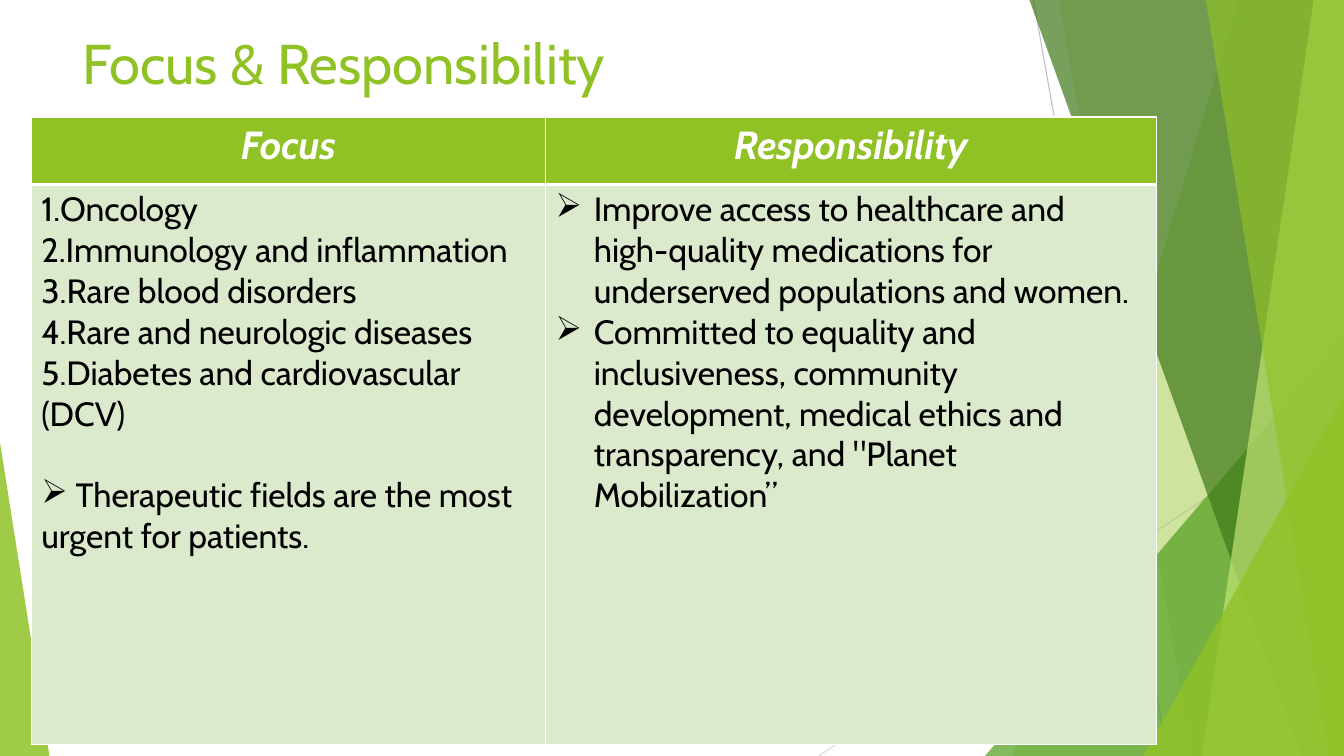
from dataclasses import dataclass

from lxml.etree import SubElement
from pptx import Presentation
from pptx.dml.color import RGBColor
from pptx.enum.shapes import MSO_CONNECTOR, MSO_SHAPE
from pptx.enum.text import MSO_ANCHOR, PP_ALIGN
from pptx.oxml.ns import qn
from pptx.util import Inches, Pt


@dataclass(frozen=True)
class Theme:
    font: str = "Cabin"
    green: str = "90C226"
    mid_green: str = "54A021"
    dark_green: str = "3F7819"
    light_green: str = "C0E474"
    body_fill: str = "DBE9CD"
    white: str = "FFFFFF"
    black: str = "000000"
    title_size: int = 40
    header_size: int = 28
    body_size: int = 24


theme = Theme()


def add_run(paragraph, text, size, color, emphasis=False):
    run = paragraph.add_run()
    run.text = text
    run.font.name = theme.font
    run.font.size = Pt(size)
    run.font.bold = run.font.italic = emphasis
    run.font.color.rgb = RGBColor.from_string(color)


def style_facet(shape, color, opacity):
    shape.shadow.inherit = False
    shape.line.fill.background()
    shape.fill.solid()
    shape.fill.fore_color.rgb = RGBColor.from_string(color)
    color_element = shape._element.spPr.find(qn("a:solidFill"))[0]
    SubElement(color_element, qn("a:alpha"), val=str(opacity * 1000))


presentation = Presentation()
presentation.slide_width = Inches(13.33)
presentation.slide_height = Inches(7.5)
slide = presentation.slides.add_slide(presentation.slide_layouts[6])
shapes = slide.shapes

# Thin background lines
for x1, y1, x2, y2, color in [
    (10.25, 0, 11.58, 7.5, "BFBFBF"),
    (13.33, 4.03, 8.12, 7.5, "D9D9D9"),
]:
    line = shapes.add_connector(
        MSO_CONNECTOR.STRAIGHT, Inches(x1), Inches(y1), Inches(x2), Inches(y2))
    line.line.color.rgb = RGBColor.from_string(color)
    line.line.width = Pt(0.75)
    SubElement(line._element.spPr, qn("a:effectLst"))

# Facets: bands (top x, bottom x) run to the right edge;
# triangles (left, top, width, apex) stand on the bottom edge
facets = [
    ("band", (12.28, 10.04), theme.green, 30),
    ("band", (10.5, 11.83), theme.green, 20),
    ("triangle", (9.77, 3.33, 3.56, 1), theme.mid_green, 72),
    ("band", (10.21, 12.91), theme.dark_green, 70),
    ("band", (13.03, 11.92), theme.light_green, 70),
    ("band", (11.96, 13.18), theme.green, 65),
    ("triangle", (11.34, 3.93, 1.99, 1), theme.green, 80),
    ("triangle", (0, 4.39, 0.49, 0), theme.green, 85),
]
for kind, geometry, color, opacity in facets:
    if kind == "band":
        top_x, bottom_x = geometry
        builder = shapes.build_freeform(Inches(top_x), 0)
        builder.add_line_segments([
            (Inches(13.33), 0),
            (Inches(13.33), Inches(7.5)),
            (Inches(bottom_x), Inches(7.5)),
        ])
        facet = builder.convert_to_shape()
    else:
        left, top, width, apex = geometry
        facet = shapes.add_shape(
            MSO_SHAPE.ISOSCELES_TRIANGLE,
            Inches(left), Inches(top), Inches(width), Inches(7.5 - top))
        facet.adjustments[0] = apex
    style_facet(facet, color, opacity)

# Title
title = shapes.add_textbox(Inches(0.72), Inches(0.23), Inches(9.4), Inches(1.44))
title.text_frame.word_wrap = True
title.text_frame.vertical_anchor = MSO_ANCHOR.TOP
add_run(title.text_frame.paragraphs[0], "Focus & Responsibility",
        theme.title_size, theme.green)

# Table grid
table = shapes.add_table(
    2, 2, Inches(0.31), Inches(1.16), Inches(11.16), Inches(6.23)).table
for column, width in zip(table.columns, (5.1, 6.06)):
    column.width = Inches(width)
for row, height in zip(table.rows, (0.67, 5.56)):
    row.height = Inches(height)

# Cell borders and fills, with a heavy rule under the header
for row_index, fill in enumerate((theme.green, theme.body_fill)):
    for cell in table.rows[row_index].cells:
        properties = cell._tc.get_or_add_tcPr()
        for side in ("lnL", "lnR", "lnT", "lnB"):
            at_rule = side == ("lnB", "lnT")[row_index]
            border = SubElement(properties, qn(f"a:{side}"),
                                w=str(Pt(3 if at_rule else 1)))
            border_fill = SubElement(border, qn("a:solidFill"))
            SubElement(border_fill, qn("a:srgbClr"), val=theme.white)
        cell.fill.solid()
        cell.fill.fore_color.rgb = RGBColor.from_string(fill)

# Header text
for cell, heading in zip(table.rows[0].cells, ("Focus", "Responsibility")):
    paragraph = cell.text_frame.paragraphs[0]
    paragraph.alignment = PP_ALIGN.CENTER
    add_run(paragraph, heading, theme.header_size, theme.white, emphasis=True)

# Body text: (bullet, hanging indent, space before in points, text)
focus = [("number", 0, 0, area) for area in (
    "Oncology",
    "Immunology and inflammation",
    "Rare blood disorders",
    "Rare and neurologic diseases",
    "Diabetes and cardiovascular (DCV)",
)]
focus.append(
    ("➢", 0, 29, " Therapeutic fields are the most urgent for patients."))
responsibility = [("➢", 0.38, 0, duty) for duty in (
    "Improve access to healthcare and high-quality medications for "
    "underserved populations and women.",
    "Committed to equality and inclusiveness, community development, "
    "medical ethics and transparency, and \"Planet Mobilization”",
)]
for cell, items in zip(table.rows[1].cells, (focus, responsibility)):
    frame = cell.text_frame
    for index, (bullet, indent, space_before, text) in enumerate(items):
        paragraph = frame.add_paragraph() if index else frame.paragraphs[0]
        if space_before:
            paragraph.space_before = Pt(space_before)
        properties = paragraph._p.get_or_add_pPr()
        properties.set("marL", str(Inches(indent)))
        properties.set("indent", str(-Inches(indent)))
        if bullet == "number":
            SubElement(properties, qn("a:buAutoNum"), type="arabicPeriod")
        else:
            SubElement(properties, qn("a:buChar"), char=bullet)
        add_run(paragraph, text, theme.body_size, theme.black)

presentation.save("out.pptx")
